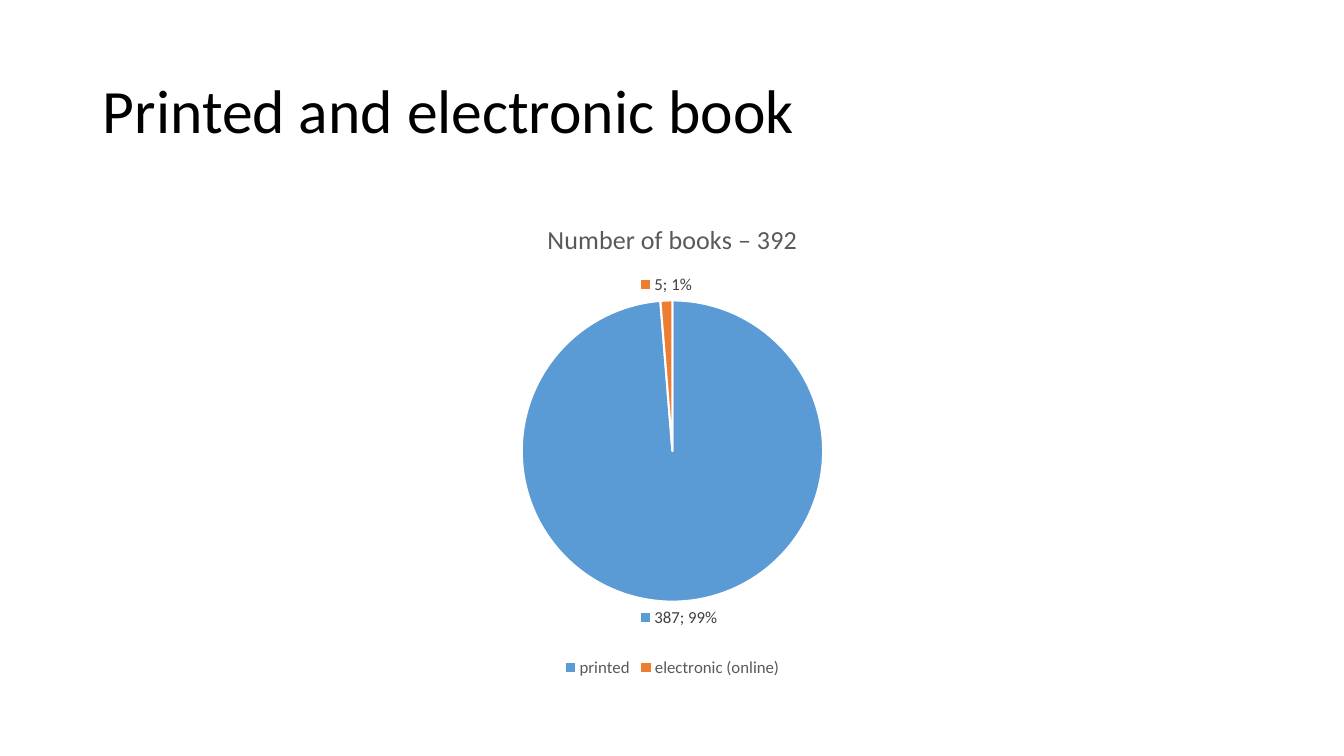
"""Build a slide with a pie chart of printed and electronic books."""
from dataclasses import dataclass

from lxml import etree
from pptx import Presentation
from pptx import util as u
from pptx.chart import data as cd
from pptx.dml.color import RGBColor
from pptx.enum import chart as ch, text
from pptx.oxml import ns

BLACK = RGBColor(0, 0, 0)
WHITE = RGBColor(255, 255, 255)
GRAY = RGBColor(0x59, 0x59, 0x59)
DARK = RGBColor(0x40, 0x40, 0x40)
BLUE = RGBColor(0x5B, 0x9B, 0xD5)
ORANGE = RGBColor(0xED, 0x7D, 0x31)
FACE = "Calibri"
LEFT, WIDTH = u.Inches(0.92), u.Inches(11.5)


@dataclass
class Slice:
    name: str
    count: int
    color: RGBColor


SLICES = [Slice("printed", 387, BLUE), Slice("electronic (online)", 5, ORANGE)]


def style(font, size: float, color: RGBColor) -> None:
    font.name, font.size, font.bold = FACE, u.Pt(size), False
    font.color.rgb = color


def write(frame, words: str, *, size: float, color: RGBColor,
          align=None, space: float | None = None) -> None:
    para = frame.paragraphs[0]
    para.alignment, para.line_spacing = align, space
    run = para.add_run()
    run.text = words
    style(run.font, size, color)


def add_title(slide) -> None:
    title = slide.shapes.title
    title.left, title.top = LEFT, u.Inches(0.4)
    title.width, title.height = WIDTH, u.Inches(1.45)
    frame = title.text_frame
    frame.vertical_anchor = text.MSO_ANCHOR.MIDDLE
    write(frame, "Printed and electronic book", size=44, color=BLACK,
          align=text.PP_ALIGN.LEFT, space=0.9)


def place_plot(chart, **box: float) -> None:
    area = chart.plots[0]._element.getparent()
    for old in area.findall(ns.qn("c:layout")):
        area.remove(old)
    layout = etree.Element(ns.qn("c:layout"))
    area.insert(0, layout)
    manual = etree.SubElement(layout, ns.qn("c:manualLayout"))
    modes = {"layoutTarget": "inner", "xMode": "edge", "yMode": "edge"}
    for tag, val in (modes | box).items():
        etree.SubElement(manual, ns.qn(f"c:{tag}"), val=str(val))


def add_labels(plot) -> None:
    plot.has_data_labels = True
    labels = plot.data_labels
    labels.show_value = labels.show_percentage = True
    labels.show_legend_key = True
    labels.position = ch.XL_LABEL_POSITION.OUTSIDE_END
    style(labels.font, 12, DARK)
    mark = etree.Element(ns.qn("c:separator"))
    mark.text = "; "
    root = labels._element
    last = root.find(ns.qn("c:showBubbleSize"))
    if last is None:
        last = root.find(ns.qn("c:showPercent"))
    last.addnext(mark)


def add_pie(slide) -> None:
    data = cd.CategoryChartData()
    data.categories = [part.name for part in SLICES]
    data.add_series("Series 1", [part.count for part in SLICES])
    chart = slide.shapes.add_chart(
        ch.XL_CHART_TYPE.PIE, LEFT, u.Inches(2), WIDTH, u.Inches(4.76), data).chart
    style(chart.font, 10, BLACK)
    chart.has_title = True
    write(chart.chart_title.text_frame, "Number of books – 392",
          size=18.6, color=GRAY)
    chart.chart_title.include_in_layout = False
    chart.has_legend = True
    chart.legend.position = ch.XL_LEGEND_POSITION.BOTTOM
    chart.legend.include_in_layout = False
    style(chart.legend.font, 12, GRAY)
    plot = chart.plots[0]
    plot.vary_by_categories = True
    for i, part in enumerate(SLICES):
        form = plot.series[0].points[i].format
        form.fill.solid()
        form.fill.fore_color.rgb = part.color
        form.line.color.rgb = WHITE
        form.line.width = u.Pt(1.5)
    add_labels(plot)
    place_plot(chart, x=0.37, y=0.2, w=0.26, h=0.64)


def main() -> None:
    deck = Presentation()
    deck.slide_width, deck.slide_height = u.Inches(13.33), u.Inches(7.5)
    slide = deck.slides.add_slide(deck.slide_layouts[5])
    add_title(slide)
    add_pie(slide)
    deck.save("out.pptx")


if __name__ == "__main__":
    main()
